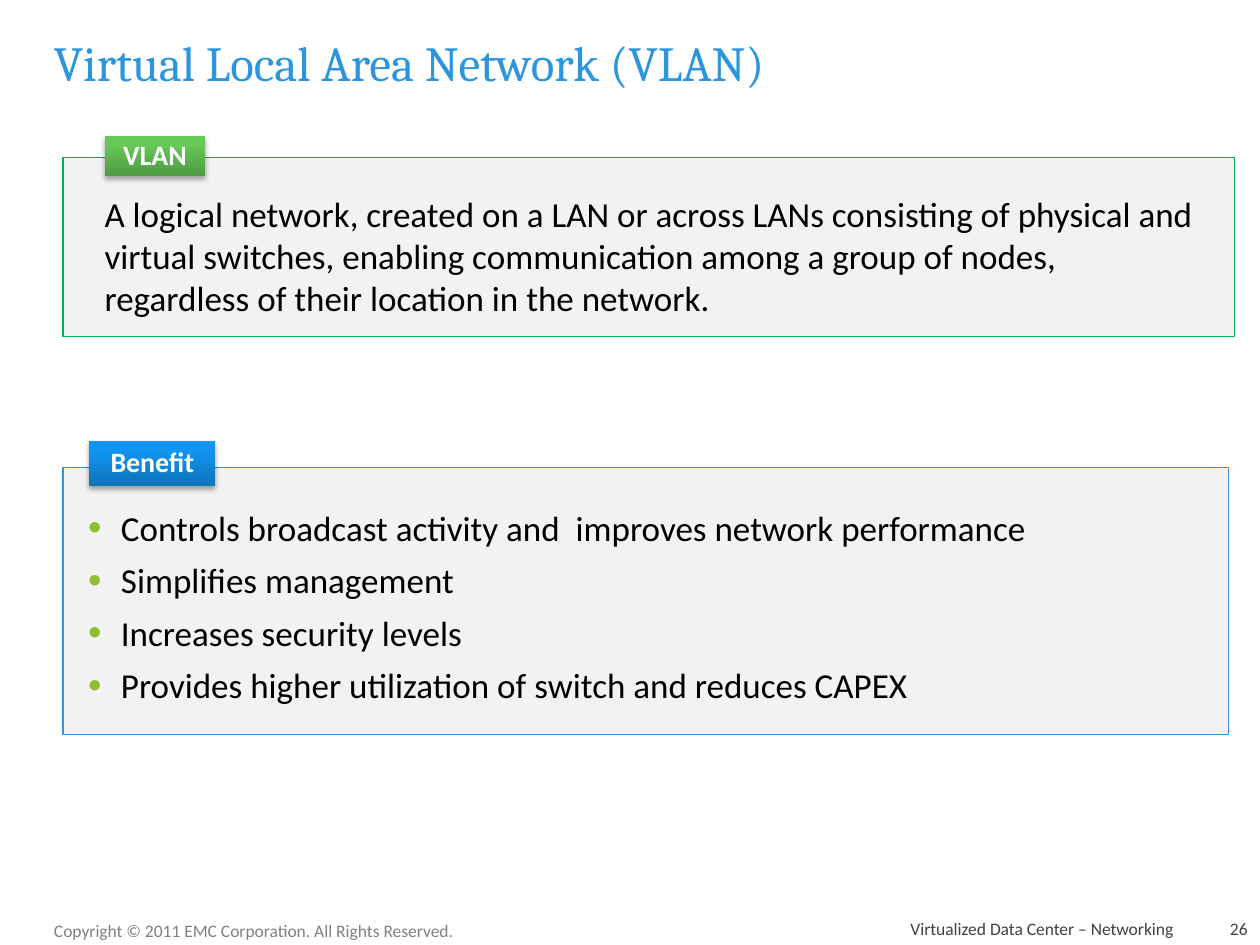
import pptx
import pptx.dml.color
import pptx.enum.shapes
import pptx.enum.text
import pptx.oxml
import pptx.oxml.ns
import pptx.util
from pptx.util import Inches

ALIGN = pptx.enum.text.PP_ALIGN
ANCHOR = pptx.enum.text.MSO_ANCHOR
NAMESPACE = pptx.oxml.ns.nsdecls("a")

COLOURS = {
    "title": "2C95DD", "copyright": "808080", "footer": "404040",
    "panel": "F2F2F2", "body": "000000", "label": "FFFFFF",
    "bullet": "8FBF30", "shadow": "000000",
    "green line": "00B050", "blue line": "2C95DD",
}
# Gradient stops: position in percent, colour
GRADIENTS = {
    "green": ((0, "4F9A43"), (80, "67C857"), (100, "66CB55")),
    "blue": ((0, "0D73B9"), (80, "1195F0"), (100, "0D97F5")),
}


def colour(name):
    return pptx.dml.color.RGBColor.from_string(COLOURS[name])


def set_attributes(target, values):
    for name, value in values.items():
        setattr(target, name, value)


def add_bullet(paragraph):
    properties = paragraph._p.get_or_add_pPr()
    properties.set("marL", str(Inches(0.26)))
    properties.set("indent", str(-Inches(0.26)))
    for xml in (
        f'<a:buClr {NAMESPACE}><a:srgbClr val="{COLOURS["bullet"]}"/></a:buClr>',
        f'<a:buSzPct {NAMESPACE} val="110000"/>',
        f'<a:buFont {NAMESPACE} typeface="Arial"/>',
        f'<a:buChar {NAMESPACE} char="•"/>',
    ):
        properties.append(pptx.oxml.parse_xml(xml))


def write_text(shape, lines, size, colour_name, font="Calibri", bold=False,
               bullets=False, frame_format=None, paragraph_format=None):
    frame = shape.text_frame
    set_attributes(frame, {"word_wrap": True, **(frame_format or {})})
    for index, line in enumerate(lines):
        paragraph = frame.paragraphs[0] if index == 0 else frame.add_paragraph()
        if bullets:
            add_bullet(paragraph)
        set_attributes(paragraph, {"alignment": ALIGN.LEFT, **(paragraph_format or {})})
        if index:
            paragraph.space_before = pptx.util.Pt(0.3 * size)
        run = paragraph.add_run()
        run.text = line
        set_attributes(run.font, {"name": font, "size": pptx.util.Pt(size), "bold": bold})
        run.font.color.rgb = colour(colour_name)


def add_text(slide, box, text, size, colour_name, **options):
    shape = slide.shapes.add_textbox(*map(Inches, box))
    write_text(shape, [text], size, colour_name, **options)


def add_rectangle(slide, box):
    shape = slide.shapes.add_shape(
        pptx.enum.shapes.MSO_SHAPE.RECTANGLE, *map(Inches, box))
    shape.shadow.inherit = False
    return shape


def add_label(slide, box, text, gradient):
    label = add_rectangle(slide, box)
    label.line.fill.background()
    properties = label._element.spPr
    stops = "".join(
        f'<a:gs pos="{position * 1000}"><a:srgbClr val="{value}"/></a:gs>'
        for position, value in GRADIENTS[gradient])
    properties.find(pptx.oxml.ns.qn("a:prstGeom")).addnext(pptx.oxml.parse_xml(
        f'<a:gradFill {NAMESPACE} rotWithShape="1"><a:gsLst>{stops}</a:gsLst>'
        '<a:lin ang="16200000" scaled="0"/></a:gradFill>'))
    # Soft shadow straight below the label
    properties.find(pptx.oxml.ns.qn("a:effectLst")).append(pptx.oxml.parse_xml(
        f'<a:outerShdw {NAMESPACE} blurRad="{pptx.util.Pt(3.1)}" '
        f'dist="{pptx.util.Pt(1.8)}" dir="5400000" rotWithShape="0">'
        f'<a:srgbClr val="{COLOURS["shadow"]}"><a:alpha val="35000"/></a:srgbClr>'
        '</a:outerShdw>'))
    write_text(
        label, [text], 16, "label", bold=True,
        frame_format={
            "vertical_anchor": ANCHOR.MIDDLE,
            "margin_left": Inches(0.11), "margin_right": Inches(0.11),
            "margin_top": 0, "margin_bottom": 0},
        paragraph_format={"alignment": ALIGN.CENTER, "line_spacing": 0.9})


def add_panel(slide, box, lines, line_colour, side_margin, top_margin,
              label_offset, label_size, label_text, gradient, bullets=False):
    left, top = box[:2]
    panel = add_rectangle(slide, box)
    panel.fill.solid()
    panel.fill.fore_color.rgb = colour("panel")
    panel.line.color.rgb = colour(line_colour)
    panel.line.width = pptx.util.Pt(0.75)
    write_text(
        panel, lines, 20, "body", bullets=bullets,
        frame_format={
            "vertical_anchor": ANCHOR.MIDDLE,
            "margin_left": Inches(side_margin), "margin_right": Inches(side_margin),
            "margin_top": Inches(top_margin), "margin_bottom": Inches(0.12)})
    # The label straddles the panel's top edge
    label_box = (left + label_offset[0], top + label_offset[1], *label_size)
    add_label(slide, label_box, label_text, gradient)


def add_footer(slide, box):
    left, top, width, height = box
    right_aligned = {
        "frame_format": {"vertical_anchor": ANCHOR.BOTTOM},
        "paragraph_format": {"alignment": ALIGN.RIGHT}}
    add_text(slide, (left, top, 3.42, 0.27),
             "Copyright © 2011 EMC Corporation. All Rights Reserved.", 10, "copyright")
    add_text(slide, (left + 4.5, top, 4.58, height),
             "Virtualized Data Center – Networking", 10, "footer", **right_aligned)
    add_text(slide, (left + width - 0.5, top, 0.5, height), "26", 10, "footer",
             **right_aligned)


def main():
    presentation = pptx.Presentation()
    set_attributes(presentation, {"slide_width": Inches(10), "slide_height": Inches(7.5)})
    slide = presentation.slides.add_slide(presentation.slide_layouts[6])

    # Title
    add_text(slide, (0.33, 0.08, 9.25, 0.83), "Virtual Local Area Network (VLAN)",
             28, "title", font="Cambria", frame_format={"vertical_anchor": ANCHOR.MIDDLE})

    # Definition
    add_panel(
        slide, (0.5, 1.25, 9.3, 1.42),
        ["A logical network, created on a LAN or across LANs consisting of physical "
         "and virtual switches, enabling communication among a group of nodes, "
         "regardless of their location in the network."],
        "green line", 0.33, 0.25, (0.33, -0.17), (0.8, 0.32), "VLAN", "green")

    # Benefits
    add_panel(
        slide, (0.5, 3.71, 9.25, 2.12),
        ["Controls broadcast activity and  improves network performance",
         "Simplifies management",
         "Increases security levels",
         "Provides higher utilization of switch and reduces CAPEX"],
        "blue line", 0.2, 0.2, (0.21, -0.21), (1, 0.36), "Benefit", "blue", bullets=True)

    # Footer
    add_footer(slide, (0.33, 7.25, 9.67, 0.25))
    presentation.save("out.pptx")


if __name__ == "__main__":
    main()
